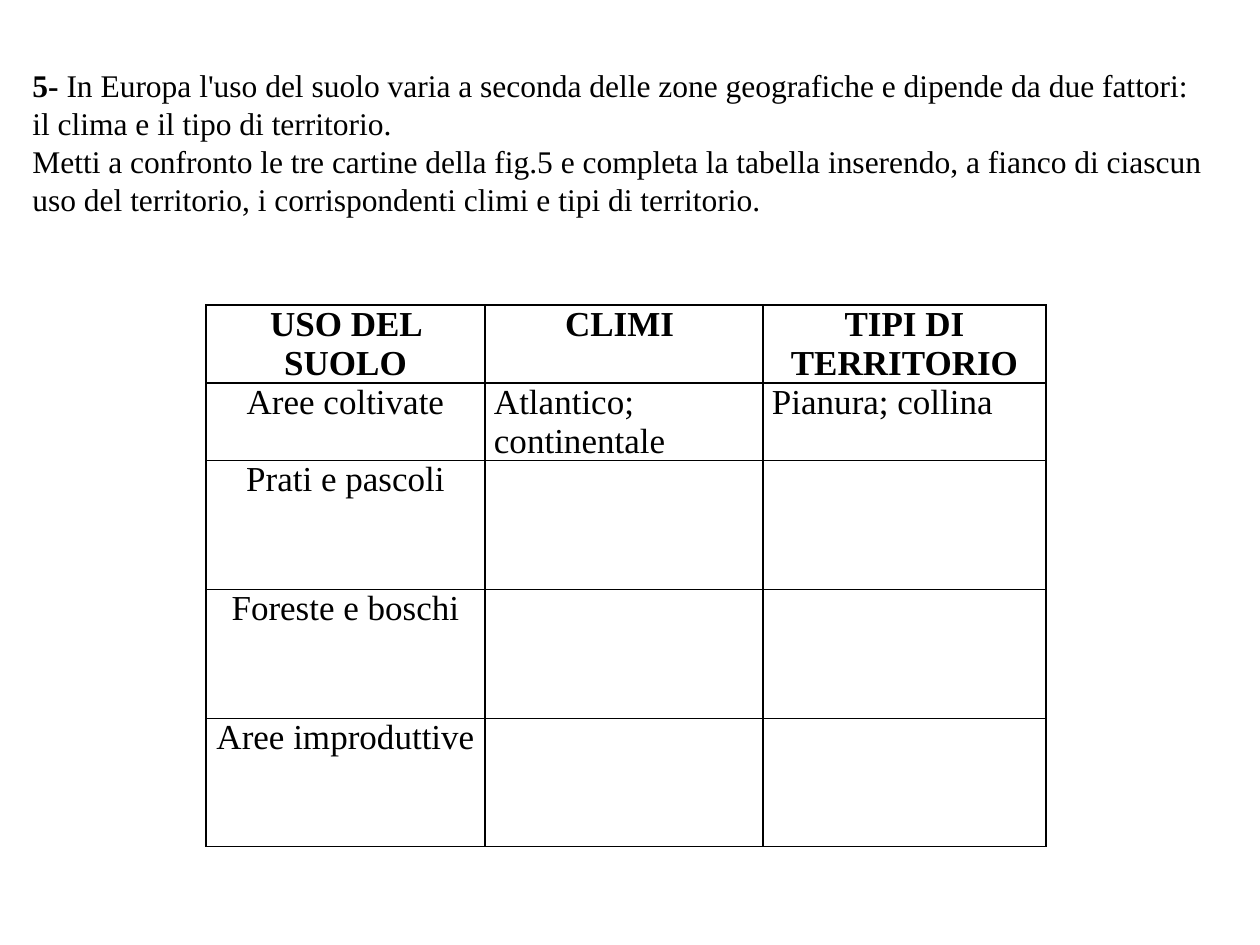
from dataclasses import dataclass

from lxml.etree import SubElement
from pptx import Presentation
from pptx.dml.color import RGBColor
from pptx.enum.text import MSO_ANCHOR, PP_ALIGN as Align
from pptx.oxml.ns import qn
from pptx.util import Pt

EMU_PER_PX = 914400 // 126


@dataclass(frozen=True)
class Theme:
    font: str = "Times New Roman"
    ink: str = "000000"
    paper: str = "FFFFFF"
    intro_size: int = 18
    table_size: int = 20
    border_width: int = 1


THEME = Theme()

INTRO = [
    [("5- ", True),
     ("In Europa l'uso del suolo varia a seconda delle zone geografiche e dipende da due fattori:", False)],
    [("il clima e il tipo di territorio.", False)],
    [("Metti a confronto le tre cartine della fig.5 e completa la tabella inserendo, a fianco di ciascun", False)],
    [("uso del territorio, i corrispondenti climi e tipi di territorio.", False)],
]
LAND_USE = [
    ["USO DEL SUOLO", "CLIMI ", "TIPI DI TERRITORIO"],
    ["Aree coltivate", "Atlantico; continentale", "Pianura; collina"],
    ["Prati e pascoli", "", ""],
    ["Foreste e boschi", "", ""],
    ["Aree improduttive", "", ""],
]
COLUMN_WIDTHS = [279, 278, 283]
ROW_HEIGHTS = [78, 77, 129, 129, 128]


def px(length):
    return length * EMU_PER_PX


def style_run(run, size, bold):
    run.font.name = THEME.font
    run.font.size = Pt(size)
    run.font.bold = bold
    run.font.color.rgb = RGBColor.from_string(THEME.ink)


def add_intro(slide, left, top, width, height):
    frame = slide.shapes.add_textbox(px(left), px(top), px(width), px(height)).text_frame
    frame.word_wrap = True
    frame.vertical_anchor = MSO_ANCHOR.TOP
    for index, line in enumerate(INTRO):
        paragraph = frame.add_paragraph() if index else frame.paragraphs[0]
        for text, bold in line:
            run = paragraph.add_run()
            run.text = text
            style_run(run, THEME.intro_size, bold)


def set_borders(cell):
    properties = cell._tc.get_or_add_tcPr()
    for side in ("a:lnL", "a:lnR", "a:lnT", "a:lnB"):
        line = SubElement(properties, qn(side), w=str(Pt(THEME.border_width)))
        fill = SubElement(line, qn("a:solidFill"))
        SubElement(fill, qn("a:srgbClr"), val=THEME.ink)


def fill_cell(cell, text, align, bold):
    cell.margin_left = cell.margin_right = px(9)
    cell.margin_top = cell.margin_bottom = 0
    set_borders(cell)
    cell.fill.solid()
    cell.fill.fore_color.rgb = RGBColor.from_string(THEME.paper)
    if text:
        paragraph = cell.text_frame.paragraphs[0]
        paragraph.text = text
        paragraph.alignment = align
        style_run(paragraph.runs[0], THEME.table_size, bold)


def add_land_use_table(slide, left, top):
    table = slide.shapes.add_table(
        len(ROW_HEIGHTS), len(COLUMN_WIDTHS), px(left), px(top),
        px(sum(COLUMN_WIDTHS)), px(sum(ROW_HEIGHTS))).table
    table.horz_banding = False
    for column, width in zip(table.columns, COLUMN_WIDTHS):
        column.width = px(width)
    for row_index, (row, height) in enumerate(zip(table.rows, ROW_HEIGHTS)):
        row.height = px(height)
        is_header = row_index == 0
        for column_index, cell in enumerate(row.cells):
            centred = is_header or column_index == 0
            align = Align.CENTER if centred else Align.JUSTIFY
            fill_cell(cell, LAND_USE[row_index][column_index], align, is_header)


def main():
    presentation = Presentation()
    presentation.slide_width = px(1260)
    presentation.slide_height = px(945)
    slide = presentation.slides.add_slide(presentation.slide_layouts[6])
    add_land_use_table(slide, 206, 305)
    add_intro(slide, 20, 60, 1207, 204)
    presentation.save("out.pptx")


if __name__ == "__main__":
    main()
